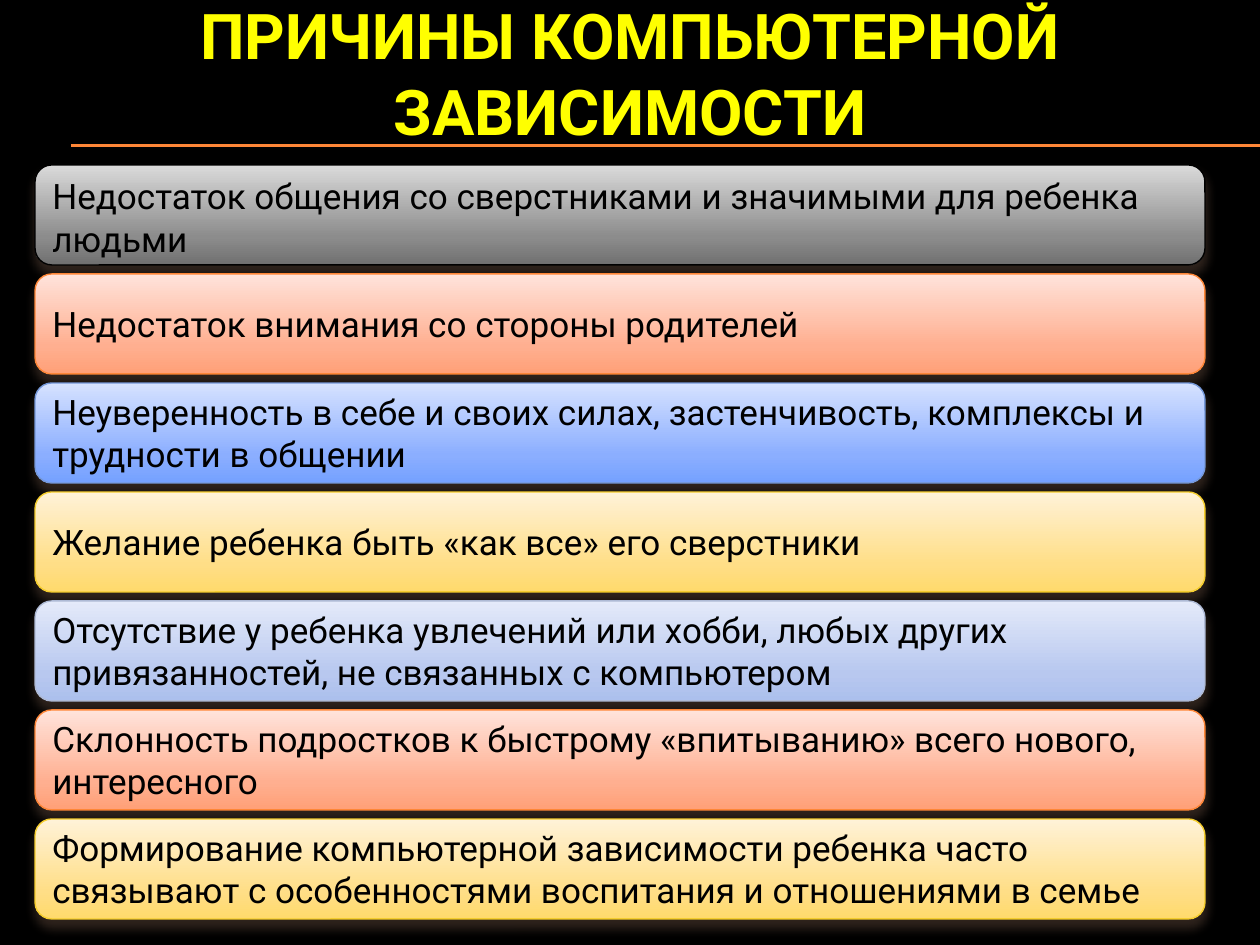
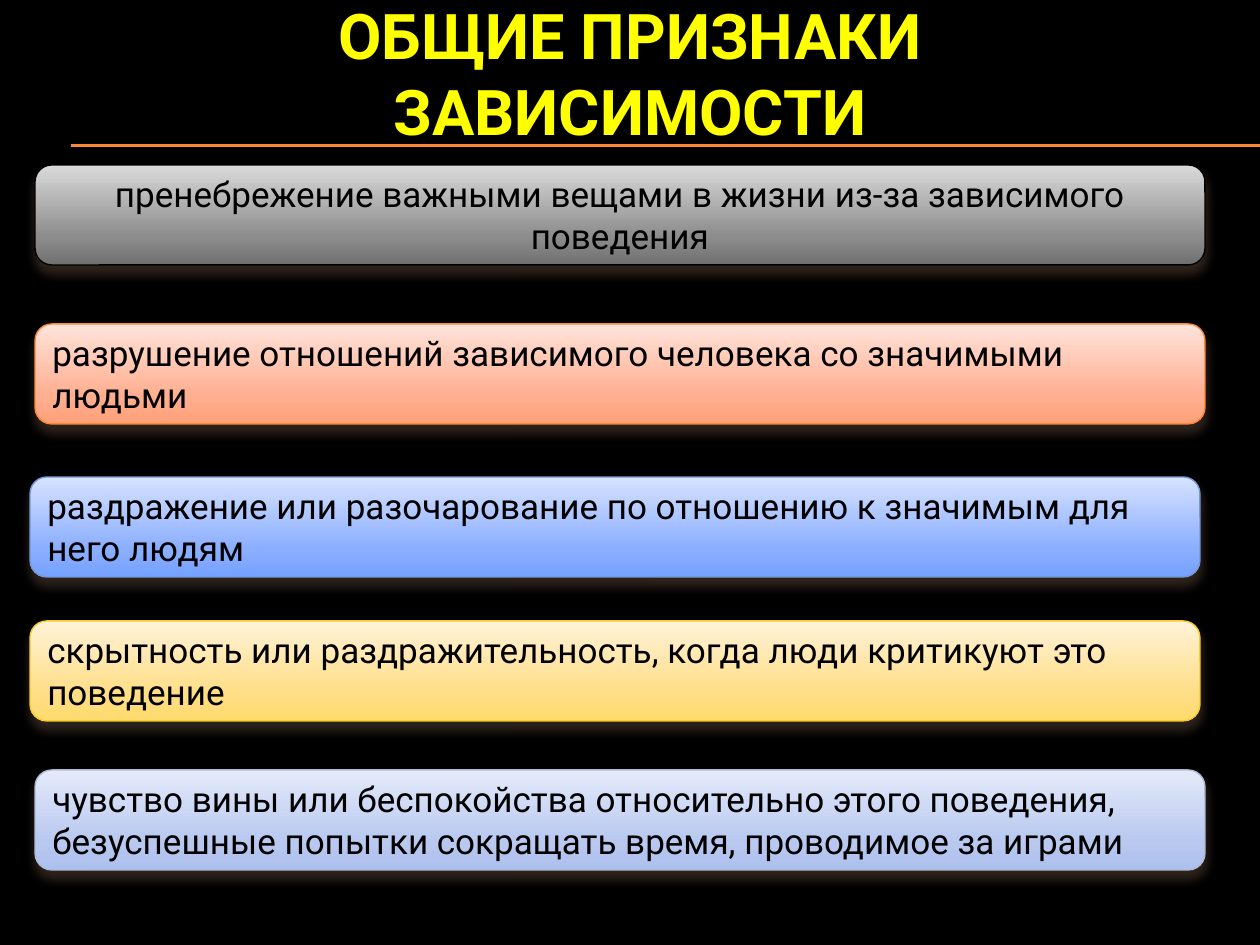
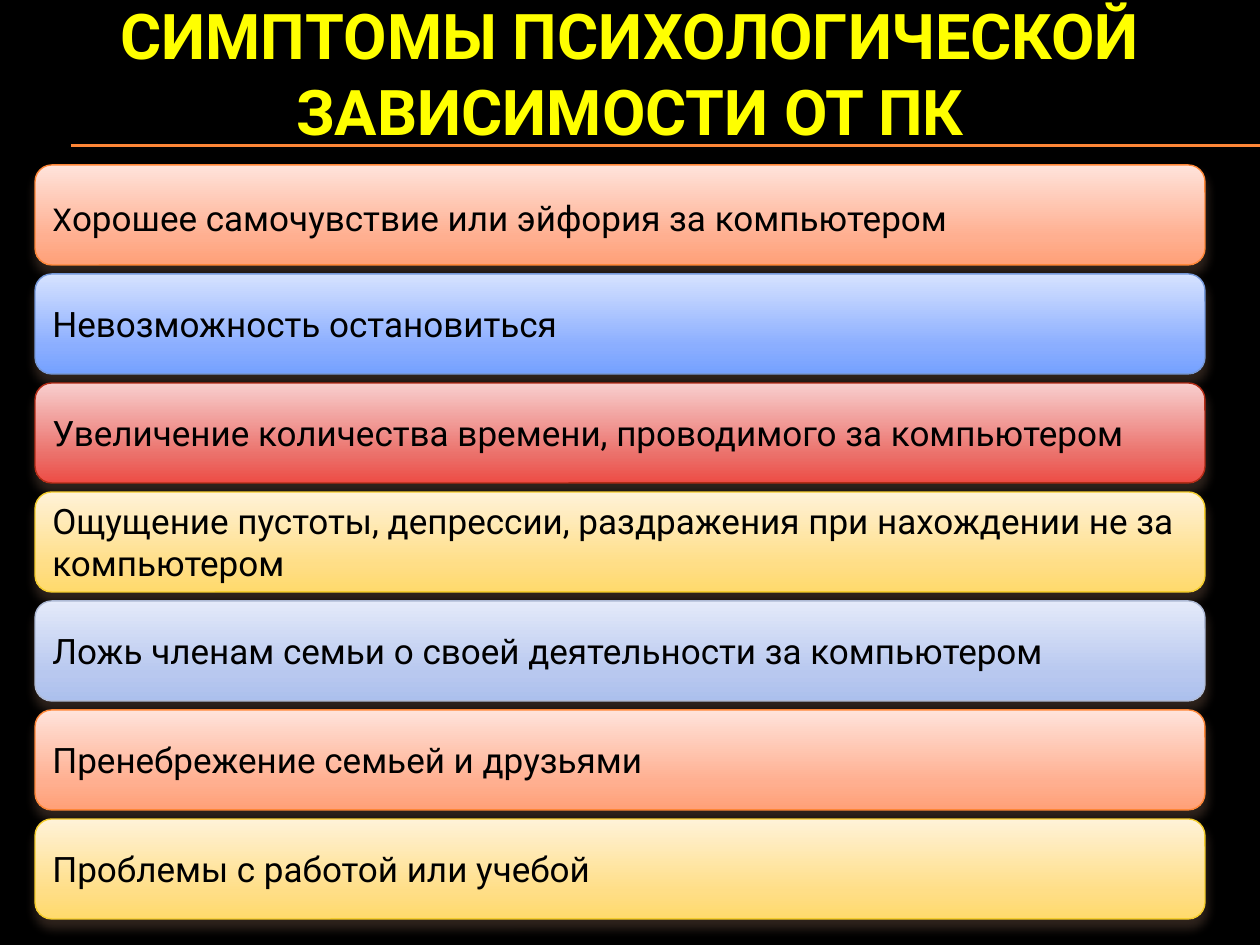
from copy import deepcopy

from pptx import Presentation
from pptx.dml.color import RGBColor
from pptx.enum.shapes import MSO_CONNECTOR, MSO_SHAPE
from pptx.enum.text import MSO_ANCHOR, MSO_AUTO_SIZE, PP_ALIGN
from pptx.oxml import parse_xml
from pptx.oxml.ns import nsdecls, qn
from pptx.util import Emu, Pt

EMU_PER_PX = 914400 // 126
SLIDE_WIDTH, SLIDE_HEIGHT = 1260, 945
TITLE_HEIGHT = 145
RULE_LEFT = 71
RULE_TOPS = (145, 146)
BAR_LEFT, BAR_TOP, BAR_WIDTH, BAR_HEIGHT = 35, 165, 1170, 100
BAR_PITCH = 109
GRADIENT_POSITIONS = (0, 0.72, 1)
FONT = "Roboto"

COLORS = {
    "background": "000000",
    "title": "FFFF00",
    "rule": "FE8637",
    "text": "000000",
    "shadow": "4E3B30",
}
# Each bar style: outline colour, then the gradient from top to bottom.
BAR_STYLES = {
    "gray": ("000000", ("DADADA", "8C8C8C", "707070")),
    "orange": ("FE8637", ("FFE3DB", "FFAF90", "FFA077")),
    "blue": ("7598D9", ("D6E2FF", "8BAEFF", "75A1FF")),
    "yellow": ("F5CD2D", ("FFF2D8", "FFDE87", "FFDA6C")),
    "lavender": ("AEBAD5", ("E4EAFA", "B8C8EF", "ACC0ED")),
    "red": ("B32C16", ("F8CFCE", "EB706A", "ED4C45")),
}

CAUSES = [
    ("gray", "Недостаток общения со сверстниками и значимыми для ребенка людьми",
     {"nudge": 4}),
    ("orange", "Недостаток внимания со стороны родителей", {}),
    ("blue", "Неуверенность в себе и своих силах, застенчивость, комплексы и "
             "трудности в общении", {}),
    ("yellow", "Желание ребенка быть «как все» его сверстники", {}),
    ("lavender", "Отсутствие у ребенка увлечений или хобби, любых других "
                 "привязанностей, не связанных с компьютером", {}),
    ("orange", "Склонность подростков к быстрому «впитыванию» всего нового, "
               "интересного", {}),
    ("yellow", "Формирование компьютерной зависимости ребенка часто связывают с "
               "особенностями воспитания и отношениями в семье", {}),
]
SIGNS = [
    ("gray", "пренебрежение важными вещами в жизни из-за зависимого поведения",
     {"align": PP_ALIGN.CENTER}),
    ("orange", "разрушение отношений зависимого человека со значимыми людьми",
     {"top": 324}),
    ("blue", "раздражение или разочарование по отношению к значимым для него людям",
     {"left": 30, "top": 477}),
    ("yellow", "скрытность или раздражительность, когда люди критикуют это поведение",
     {"left": 30, "top": 621}),
    ("lavender", "чувство вины или беспокойства относительно этого поведения,\n"
                 "безуспешные попытки сокращать время, проводимое за играми",
     {"top": 770}),
]
SYMPTOMS = [
    ("orange", "Хорошее самочувствие или эйфория за компьютером",
     {"nudge": 4, "initial_size": 18}),
    ("blue", "Невозможность остановиться", {}),
    ("red", "Увеличение количества времени, проводимого за компьютером", {}),
    ("yellow", "Ощущение пустоты, депрессии, раздражения при нахождении не за "
               "компьютером", {}),
    ("lavender", "Ложь членам семьи о своей деятельности за компьютером", {}),
    ("orange", "Пренебрежение семьей и друзьями", {}),
    ("yellow", "Проблемы с работой или учебой", {}),
]
SLIDES = [
    ("ПРИЧИНЫ КОМПЬЮТЕРНОЙ ЗАВИСИМОСТИ", CAUSES),
    ("ОБЩИЕ ПРИЗНАКИ\nЗАВИСИМОСТИ", SIGNS),
    ("СИМПТОМЫ ПСИХОЛОГИЧЕСКОЙ ЗАВИСИМОСТИ ОТ ПК", SYMPTOMS),
]


def px(length):
    return Emu(length * EMU_PER_PX)


def rgb(value):
    return RGBColor.from_string(value)


def write(frame, text, *, size=20, color="text", bold=False,
          align=PP_ALIGN.LEFT, initial_size=None):
    """Fill a text frame; initial_size sets a different size for the first letter."""
    frame.word_wrap = True
    frame.auto_size = MSO_AUTO_SIZE.NONE
    frame.vertical_anchor = MSO_ANCHOR.MIDDLE
    paragraph = frame.paragraphs[0]
    paragraph.text = text
    paragraph.alignment = align
    if initial_size:
        initial = paragraph.runs[0]
        paragraph.add_run().text = text[1:]
        initial.text = text[:1]
    for run in paragraph.runs:
        run.font.name = FONT
        run.font.size = Pt(size)
        run.font.bold = bold
        run.font.color.rgb = rgb(COLORS[color])
    if initial_size:
        initial.font.size = Pt(initial_size)
    for line_break in paragraph._p.findall(qn("a:br")):
        line_break.insert(0, deepcopy(paragraph.runs[0]._r.rPr))


def add_title(slide, text):
    title = slide.shapes.title
    title.left, title.top = px(0), px(0)
    title.width, title.height = px(SLIDE_WIDTH), px(TITLE_HEIGHT)
    frame = title.text_frame
    frame.margin_top = frame.margin_bottom = 0
    write(frame, text, size=36, color="title", bold=True, align=PP_ALIGN.CENTER)


def add_rule(slide, top):
    rule = slide.shapes.add_connector(
        MSO_CONNECTOR.STRAIGHT, px(RULE_LEFT), px(top), px(SLIDE_WIDTH), px(top))
    rule.line.color.rgb = rgb(COLORS["rule"])
    rule.line.width = Pt(0.75)
    rule._element.spPr.append(parse_xml(f"<a:effectLst {nsdecls('a')}/>"))


def fill_gradient(shape, colors):
    """Apply a three-stop gradient running from top to bottom."""
    shape.fill.gradient()
    shape.fill.gradient_angle = 270
    stop_list = shape._element.spPr.find(".//" + qn("a:gsLst"))
    stop_list.insert(1, deepcopy(stop_list[0]))
    for stop, position, color in zip(
            shape.fill.gradient_stops, GRADIENT_POSITIONS, colors):
        stop.position = position
        stop.color.rgb = rgb(color)


def add_shadow(shape):
    shape.shadow.inherit = False
    effects = shape._element.spPr.find(qn("a:effectLst"))
    effects.append(parse_xml(
        f'<a:outerShdw {nsdecls("a")} blurRad="{Pt(6)}" dist="{Pt(4)}" '
        f'dir="5400000" rotWithShape="0"><a:srgbClr val="{COLORS["shadow"]}">'
        '<a:alpha val="60000"/></a:srgbClr></a:outerShdw>'))


def add_bar(slide, style, text, *, left=BAR_LEFT, top=BAR_TOP, nudge=0, **text_format):
    """Add a rounded bar; nudge is extra inset above its text."""
    bar = slide.shapes.add_shape(
        MSO_SHAPE.ROUNDED_RECTANGLE, px(left), px(top), px(BAR_WIDTH), px(BAR_HEIGHT))
    outline, gradient = BAR_STYLES[style]
    fill_gradient(bar, gradient)
    bar.line.color.rgb = rgb(outline)
    bar.line.width = Pt(0.79)
    add_shadow(bar)
    bar.text_frame.margin_top += px(nudge)
    write(bar.text_frame, text, **text_format)


def add_list_slide(presentation, title, bars):
    slide = presentation.slides.add_slide(presentation.slide_layouts[5])
    for top in RULE_TOPS:
        add_rule(slide, top)
    add_title(slide, title)
    for index, (style, text, options) in enumerate(bars):
        placement = {"top": BAR_TOP + index * BAR_PITCH, **options}
        add_bar(slide, style, text, **placement)


def main():
    presentation = Presentation()
    presentation.slide_width = px(SLIDE_WIDTH)
    presentation.slide_height = px(SLIDE_HEIGHT)
    background = presentation.slide_master.background.fill
    background.solid()
    background.fore_color.rgb = rgb(COLORS["background"])
    for title, bars in SLIDES:
        add_list_slide(presentation, title, bars)
    presentation.save("out.pptx")


if __name__ == "__main__":
    main()
